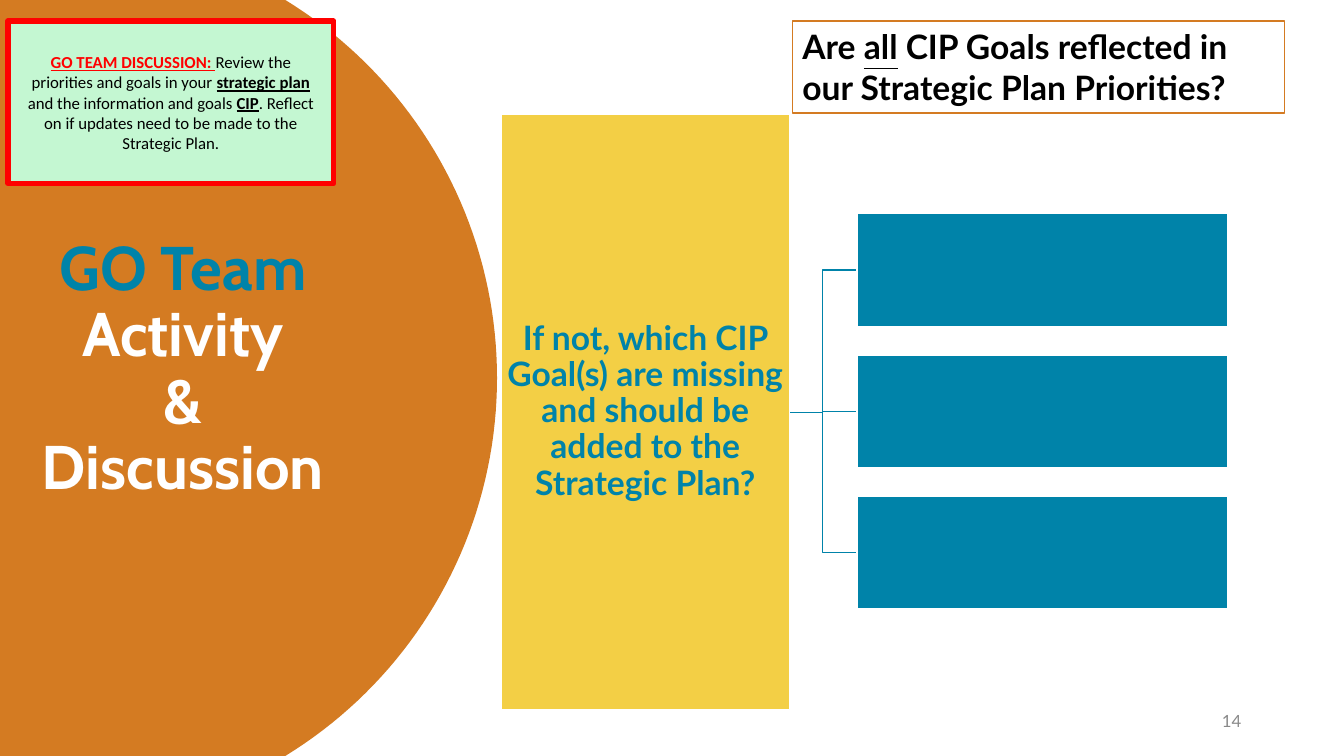
import math

from pptx import Presentation
from pptx import util as u
from pptx.dml.color import RGBColor
from pptx.enum import shapes, text

COLORS = {
    "orange": "D47B22",
    "teal": "0083A9",
    "yellow": "F3CF45",
    "mint": "C4F7D2",
    "red": "FF0000",
    "white": "FFFFFF",
    "black": "000000",
    "gray": "898989",
}
ALIGN = text.PP_ALIGN
ANCHOR = text.MSO_ANCHOR


def rgb(name):
    return RGBColor.from_string(COLORS[name])


def box(at):
    return [u.Inches(v) for v in at]


def paint(sp, fill=None, line=None, width=1):
    sp.shadow.inherit = False
    if fill:
        sp.fill.solid()
        sp.fill.fore_color.rgb = rgb(fill)
    else:
        sp.fill.background()
    if line:
        sp.line.color.rgb = rgb(line)
        sp.line.width = u.Pt(width)
    else:
        sp.line.fill.background()


def write(sp, paragraphs, size=24, font="Lato", color="black", bold=False,
          align=ALIGN.LEFT, anchor=ANCHOR.MIDDLE, spacing=None, margins=(0.1, 0.05)):
    tf = sp.text_frame
    tf.word_wrap = True
    tf.auto_size = text.MSO_AUTO_SIZE.NONE
    tf.vertical_anchor = anchor
    tf.margin_left = tf.margin_right = u.Inches(margins[0])
    tf.margin_top = tf.margin_bottom = u.Inches(margins[1])
    for i, runs in enumerate(paragraphs):
        p = tf.add_paragraph() if i else tf.paragraphs[0]
        p.alignment = align
        if spacing:
            p.line_spacing = spacing
        for words, style in runs:
            for j, part in enumerate(words.split("\n")):
                if j:
                    p.add_line_break()
                if not part:
                    continue
                r = p.add_run()
                r.text = part
                r.font.size = u.Pt(size)
                r.font.name = font
                r.font.bold = style.get("bold", bold)
                r.font.underline = style.get("underline", False)
                r.font.color.rgb = rgb(style.get("color", color))


def add_rect(s, at, **look):
    sp = s.shapes.add_shape(shapes.MSO_SHAPE.RECTANGLE, *box(at))
    paint(sp, **look)
    return sp


def add_outline(s, points, close=False, **look):
    start, *rest = [box(point) for point in points]
    builder = s.shapes.build_freeform(*start)
    builder.add_line_segments(rest, close=close)
    paint(builder.convert_to_shape(), **look)


def add_disc(s, edge, reach, height):
    half = height / 2
    sagitta = reach - edge
    radius = (half ** 2 + sagitta ** 2) / (2 * sagitta)
    sweep = math.asin(half / radius)
    steps = 80
    angles = [sweep * (2 * i / steps - 1) for i in range(steps + 1)]
    arc = [(reach - radius + radius * math.cos(a), half + radius * math.sin(a)) for a in angles]
    add_outline(s, [(0, 0)] + arc + [(0, height)], close=True, fill="orange")


def add_title(s, at, runs, **style):
    title = s.shapes.title
    title.element.getparent().append(title.element)
    title.left, title.top, title.width, title.height = box(at)
    write(title, [runs], **style)


def add_goal_tree(s, question):
    root_x, trunk_x, goal_x, middle = 7.82, 8.16, 8.5, 4.08
    goal_w, goal_h, pitch = 3.68, 1.12, 1.4
    centers = [middle + pitch * i for i in (-1, 0, 1)]
    root_y = 4.09
    for y in reversed(centers):
        add_outline(s, [(root_x, root_y), (trunk_x, root_y), (trunk_x, y), (goal_x, y)],
                    line="teal")
    root = add_rect(s, (4.97, 1.13, 2.86, 5.91), fill="yellow", line="white")
    write(root, [[(question, {})]], color="teal", bold=True, align=ALIGN.CENTER,
          spacing=0.9, margins=(0.02, 0.02))
    for y in centers:
        add_rect(s, (goal_x, y - goal_h / 2, goal_w, goal_h), fill="teal", line="white")


def main():
    prs = Presentation()
    prs.slide_width, prs.slide_height = u.Inches(13.33), u.Inches(7.5)
    s = prs.slides.add_slide(prs.slide_layouts[5])

    add_disc(s, edge=2.83, reach=4.93, height=7.5)
    add_title(s, (0.2, 2.11, 3.23, 3.12),
              [("GO Team\n", {"color": "teal"}), ("Activity\n&\nDiscussion", {})],
              size=44, font="Cabin", color="white", bold=True,
              align=ALIGN.CENTER, spacing=0.9)

    number = s.shapes.add_textbox(*box((9.41, 6.95, 3, 0.4)))
    write(number, [[("14", {})]], size=12, color="gray", align=ALIGN.RIGHT)

    key = {"bold": True, "underline": True}
    prompt = add_rect(s, (0.08, 0.21, 3.23, 1.61), fill="mint", line="red", width=4)
    write(prompt, [[
        ("GO TEAM DISCUSSION: ", {**key, "color": "red"}),
        ("Review the priorities and goals in your ", {}),
        ("strategic plan ", key),
        ("and the information and goals ", {}),
        ("CIP", key),
        (". Reflect on if updates need to be made to the Strategic Plan.", {}),
    ]], size=12, font="Calibri", align=ALIGN.CENTER, margins=(0.15, 0.05))

    heading = add_rect(s, (7.86, 0.21, 4.88, 0.91), line="orange")
    write(heading, [
        [("Are ", {}), ("all", {"underline": True}), (" CIP Goals reflected in", {})],
        [("our Strategic Plan Priorities?", {})],
    ], bold=True, anchor=ANCHOR.TOP)

    add_goal_tree(s, "If not, which CIP Goal(s) are missing and should be "
                     "added to the Strategic Plan?")
    prs.save("out.pptx")


if __name__ == "__main__":
    main()
